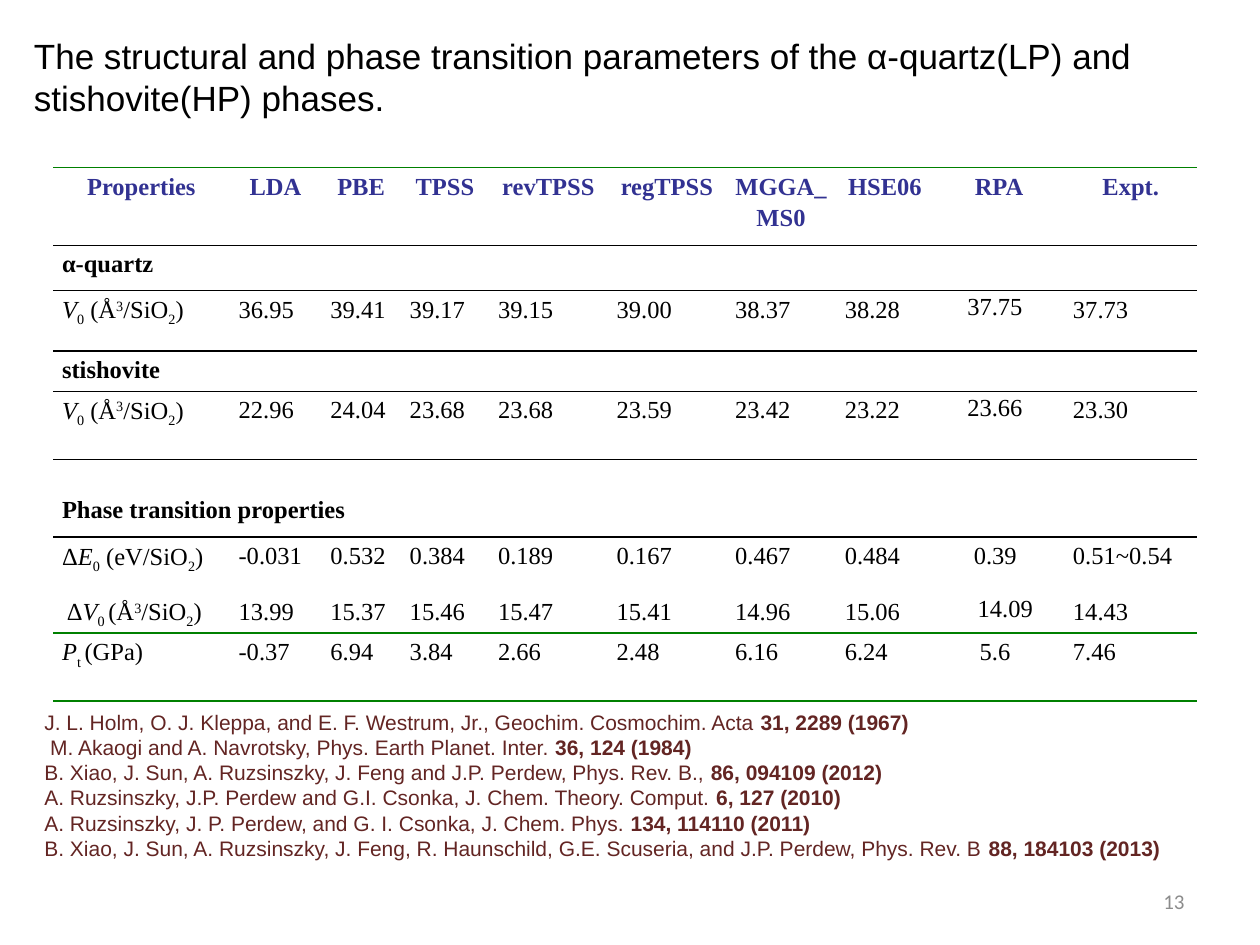
from lxml.etree import SubElement
from pptx import Presentation
from pptx.dml.color import RGBColor
from pptx.enum.text import MSO_ANCHOR, MSO_AUTO_SIZE, PP_ALIGN
from pptx.oxml.ns import qn
from pptx.util import Cm, Pt

BLACK = RGBColor(0x00, 0x00, 0x00)
GREEN = RGBColor(0x00, 0x80, 0x00)
INDIGO = RGBColor(0x32, 0x32, 0x92)
MAROON = RGBColor(0x63, 0x25, 0x23)
GREY = RGBColor(0x8C, 0x8C, 0x8C)

TITLE = ("The structural and phase transition parameters of the "
         "α-quartz(LP) and stishovite(HP) phases.")
REFERENCES = [
    ("J. L. Holm, O. J. Kleppa, and E. F. Westrum, Jr., Geochim. Cosmochim. Acta ",
     "31, 2289 (1967)"),
    (" M. Akaogi and A. Navrotsky, Phys. Earth Planet. Inter. ", "36, 124 (1984)"),
    ("B. Xiao, J. Sun, A. Ruzsinszky, J. Feng and J.P. Perdew, Phys. Rev. B., ",
     "86, 094109 (2012)"),
    ("A. Ruzsinszky, J.P. Perdew and G.I. Csonka, J. Chem. Theory. Comput. ",
     "6, 127 (2010)"),
    ("A. Ruzsinszky, J. P. Perdew, and G. I. Csonka, J. Chem. Phys. ",
     "134, 114110 (2011)"),
    ("B. Xiao, J. Sun, A. Ruzsinszky, J. Feng, R. Haunschild, G.E. Scuseria, "
     "and J.P. Perdew, Phys. Rev. B ", "88, 184103 (2013)"),
]
HANGING_FROM = 3

SUB, SUPER, ITALIC = "sub", "super", "italic"
BASELINES = {SUB: "-25000", SUPER: "30000"}
PER_UNIT = [("/SiO", None), ("2", SUB), (")", None)]
VOLUME = [("V", ITALIC), ("0", SUB), (" (Å", None), ("3", SUPER)] + PER_UNIT
ENERGY_CHANGE = [("Δ", None), ("E", ITALIC), ("0", SUB), (" (eV", None)] + PER_UNIT
VOLUME_CHANGE = [(" Δ", None), ("V", ITALIC), ("0 ", SUB), ("(Å", None),
                 ("3", SUPER)] + PER_UNIT
PRESSURE = [("P", ITALIC), ("t ", SUB), ("(GPa)", None)]

HEADER = "Properties LDA PBE TPSS revTPSS regTPSS MGGA_MS0 HSE06 RPA Expt.".split()
SECTIONS = {1: "α-quartz", 3: "stishovite", 5: "Phase transition properties"}
DATA = {
    2: (VOLUME, "36.95 39.41 39.17 39.15 39.00 38.37 38.28 37.75 37.73"),
    4: (VOLUME, "22.96 24.04 23.68 23.68 23.59 23.42 23.22 23.66 23.30"),
    6: (ENERGY_CHANGE, "-0.031 0.532 0.384 0.189 0.167 0.467 0.484 0.39 0.51~0.54"),
    7: (VOLUME_CHANGE, "13.99 15.37 15.46 15.47 15.41 14.96 15.06 14.09 14.43"),
    8: (PRESSURE, "-0.37 6.94 3.84 2.66 2.48 6.16 6.24 5.6 7.46"),
}
RPA_COLUMN = HEADER.index("RPA")
RPA_LAYOUT = {2: (0.49, 1.07), 4: (0.49, 1.07), 6: (0.62, 1.15),
              7: (0.7, 1.07), 8: (0.74, 1.15)}
COLUMN_WIDTHS = [3.56, 1.85, 1.6, 1.78, 2.39, 2.39, 2.21, 1.98, 2.62, 2.69]
ROW_HEIGHTS = [1.57, 0.91, 1.22, 0.81, 1.37, 1.57, 1.12, 0.81, 1.37]
RULES = [GREEN] + [BLACK] * 6 + [None, GREEN, GREEN]
SIDE_MARGIN, TOP_MARGIN, SECTION_GAP = 0.18, 0.03, 0.65
NO_STYLE = "{2D5ABB26-0587-4C30-8999-92F81FD0307C}"


def set_all(target, values):
    for name, value in values.items():
        setattr(target, name, value)


class SlideBuilder:
    heading = {"name": "Arial", "size": Pt(20), "bold": False}
    reference = {"name": "Arial", "size": Pt(12)}
    cell_text = {"name": "Times New Roman", "size": Pt(14)}
    page_number = {"name": "Calibri", "size": Pt(12)}

    def __init__(self, deck):
        self.slide = deck.slides.add_slide(deck.slide_layouts[1])

    def place(self, box, left, top, width, height, anchor):
        set_all(box, {"left": Cm(left), "top": Cm(top),
                      "width": Cm(width), "height": Cm(height)})
        set_all(box.text_frame, {"word_wrap": True, "vertical_anchor": anchor,
                                 "auto_size": MSO_AUTO_SIZE.NONE})
        return box.text_frame

    def span(self, para, text, style, color, **extra):
        span = para.add_run()
        span.text = text
        set_all(span.font, {**style, **extra})
        span.font.color.rgb = color
        return span

    def title(self, text, *bounds):
        frame = self.place(self.slide.shapes.title, *bounds, MSO_ANCHOR.MIDDLE)
        para = frame.paragraphs[0]
        para.alignment = PP_ALIGN.LEFT
        self.span(para, text, self.heading, BLACK)

    def references(self, entries, *bounds):
        frame = self.place(self.slide.placeholders[1], *bounds, MSO_ANCHOR.TOP)
        for index, (source, issue) in enumerate(entries):
            para = frame.add_paragraph() if index else frame.paragraphs[0]
            para.space_before = Pt(0)
            hang = Cm(0.64) if index >= HANGING_FROM else 0
            properties = para._p.get_or_add_pPr()
            properties.set("marL", str(hang))
            properties.set("indent", str(-hang))
            SubElement(properties, qn("a:buNone"))
            self.span(para, source, self.reference, MAROON, bold=False)
            self.span(para, issue, self.reference, MAROON, bold=True)

    def number(self, text, *bounds):
        box = self.slide.shapes.add_textbox(0, 0, 0, 0)
        para = self.place(box, *bounds, MSO_ANCHOR.MIDDLE).paragraphs[0]
        para.alignment = PP_ALIGN.RIGHT
        self.span(para, text, self.page_number, GREY)

    def border(self, cell, tag, color):
        line = SubElement(cell._tc.get_or_add_tcPr(), qn(tag), w=str(Pt(1)))
        if color is None:
            SubElement(line, qn("a:noFill"))
        else:
            fill = SubElement(line, qn("a:solidFill"))
            SubElement(fill, qn("a:srgbClr"), val=str(color))

    def cell(self, cell, pieces, color=BLACK, bold=False,
             align=PP_ALIGN.JUSTIFY, spacing=1.15):
        para = cell.text_frame.paragraphs[0]
        set_all(para, {"alignment": align, "line_spacing": spacing})
        for text, kind in pieces:
            span = self.span(para, text, self.cell_text, color,
                             bold=bold, italic=kind == ITALIC)
            if kind in BASELINES:
                span.font._element.set("baseline", BASELINES[kind])

    def table(self, left, top):
        frame = self.slide.shapes.add_table(
            len(ROW_HEIGHTS), len(COLUMN_WIDTHS), Cm(left), Cm(top),
            Cm(sum(COLUMN_WIDTHS)), Cm(sum(ROW_HEIGHTS)))
        table = frame.table
        set_all(table, {"first_row": False, "horz_banding": False})
        table._tbl.tblPr.find(qn("a:tableStyleId")).text = NO_STYLE
        for column, width in zip(table.columns, COLUMN_WIDTHS):
            column.width = Cm(width)
        for index, (row, height) in enumerate(zip(table.rows, ROW_HEIGHTS)):
            row.height = Cm(height)
            for cell in row.cells:
                set_all(cell, {"margin_left": Cm(SIDE_MARGIN),
                               "margin_right": Cm(SIDE_MARGIN),
                               "margin_top": Cm(TOP_MARGIN), "margin_bottom": 0})
                self.border(cell, "a:lnT", RULES[index])
                self.border(cell, "a:lnB", RULES[index + 1])
                cell.fill.background()
        for cell, text in zip(table.rows[0].cells, HEADER):
            self.cell(cell, [(text, None)], INDIGO, True, PP_ALIGN.CENTER)
        for index, text in SECTIONS.items():
            cell = table.cell(index, 0)
            cell.merge(table.cell(index, len(HEADER) - 1))
            self.cell(cell, [(text, None)], bold=True)
        table.cell(5, 0).margin_top = Cm(TOP_MARGIN + SECTION_GAP)
        for index, (label, values) in DATA.items():
            self.cell(table.cell(index, 0), label)
            for column, value in enumerate(values.split(), 1):
                cell = table.cell(index, column)
                shift, spacing = RPA_LAYOUT[index] if column == RPA_COLUMN else (0, 1.15)
                cell.margin_left = Cm(SIDE_MARGIN + shift)
                self.cell(cell, [(value, None)], spacing=spacing)


def main():
    deck = Presentation()
    set_all(deck, {"slide_width": Cm(25.4), "slide_height": Cm(19.05)})
    page = SlideBuilder(deck)
    page.title(TITLE, 0.43, 0.56, 23.7, 1.96)
    page.references(REFERENCES, 0.64, 14.17, 24.33, 4.62)
    page.table(1.07, 3.38)
    page.number("13", 18.21, 17.65, 5.92, 1.02)
    deck.save("out.pptx")


if __name__ == "__main__":
    main()
